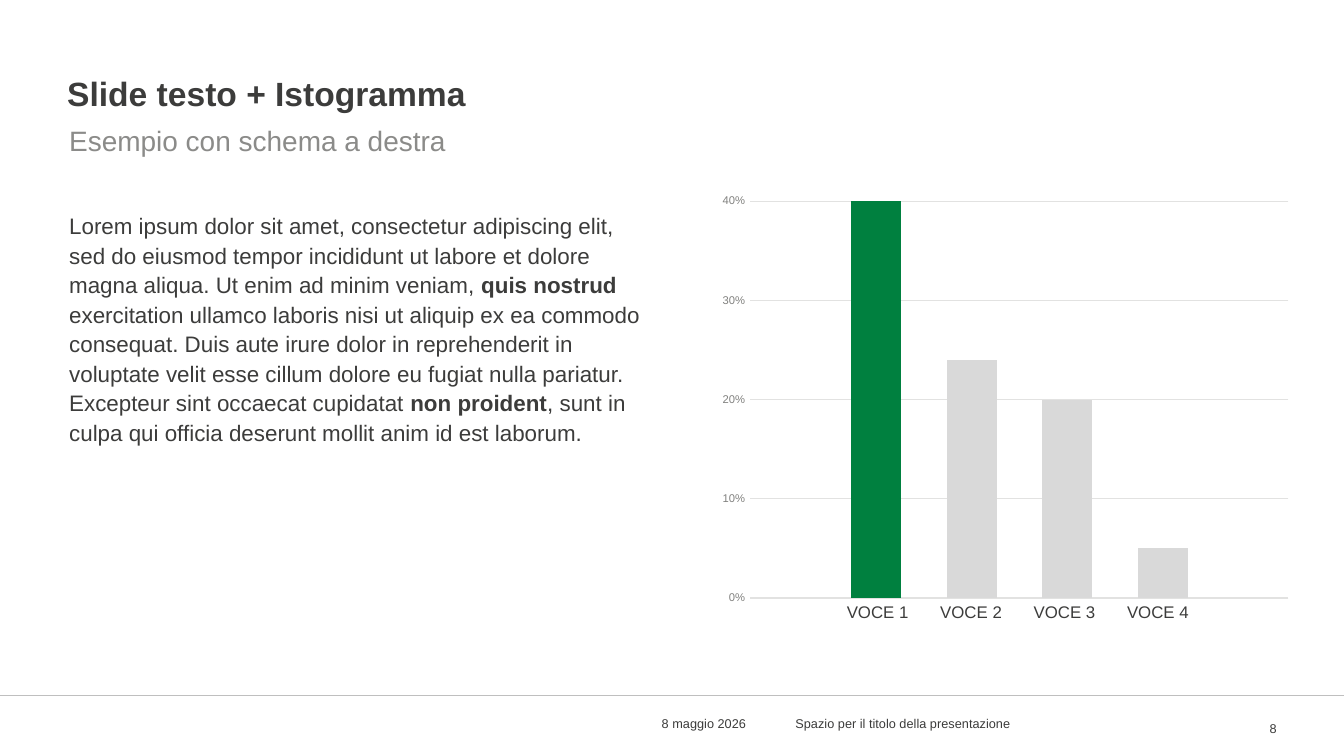
from lxml import etree
from pptx import Presentation
from pptx import util as u
from pptx.chart.data import CategoryChartData
from pptx.dml.color import RGBColor
from pptx.enum import chart as ch, shapes, text
from pptx.oxml import parse_xml
from pptx.oxml.ns import nsdecls, qn

PX = 4572  # 200 px to the inch
WIDTH, HEIGHT = 2000, 1125
FONT = "Arial"
DARK, GREY, PALE, GREEN = "3C3C3B", "8B8B89", "D9D9D9", "00803F"
LEFT, CENTER, RIGHT = text.PP_ALIGN.LEFT, text.PP_ALIGN.CENTER, text.PP_ALIGN.RIGHT

BODY = [
    ("Lorem ipsum dolor sit amet, consectetur adipiscing elit, sed do eiusmod "
     "tempor incididunt ut labore et dolore magna aliqua. Ut enim ad minim veniam, ", False),
    ("quis nostrud ", True),
    ("exercitation ullamco laboris nisi ut aliquip ex ea commodo consequat. Duis aute "
     "irure dolor in reprehenderit in voluptate velit esse cillum dolore eu fugiat "
     "nulla pariatur. Excepteur sint occaecat cupidatat ", False),
    ("non proident", True),
    (", sunt in culpa qui officia deserunt mollit anim id est laborum.", False),
]
VALUES = [0.43, 0.24, 0.2, 0.05]


def px(n):
    return u.Emu(n * PX)


def color(value):
    return RGBColor.from_string(value)


def style_font(font, size, value, bold=False):
    font.name, font.size, font.bold = FONT, u.Pt(size), bold
    font.color.rgb = color(value)


def fill_text(box, runs, size, value, insets, align=LEFT,
              anchor=text.MSO_ANCHOR.TOP, spacing=1.0):
    frame = box.text_frame
    frame.word_wrap = True
    frame.auto_size = text.MSO_AUTO_SIZE.NONE
    frame.vertical_anchor = anchor
    (frame.margin_left, frame.margin_top,
     frame.margin_right, frame.margin_bottom) = map(px, insets)
    paragraph = frame.paragraphs[0]
    paragraph.alignment, paragraph.line_spacing = align, spacing
    for words, bold in runs:
        run = paragraph.add_run()
        run.text = words
        style_font(run.font, size, value, bold)


def add_text(slide, at, runs, size, value=DARK, insets=(20, 10, 20, 10), **layout):
    box = slide.shapes.add_textbox(*map(px, at))
    fill_text(box, runs, size, value, insets, **layout)


def add_title(slide, words):
    title = slide.shapes.title
    title.left, title.top, title.width, title.height = map(px, (100, 0, 1800, 178))
    fill_text(title, [(words, True)], 18, DARK, (0, 10, 20, 10),
              anchor=text.MSO_ANCHOR.BOTTOM)


def add_rule(slide, y):
    rule = slide.shapes.add_connector(
        shapes.MSO_CONNECTOR.STRAIGHT, px(0), px(y), px(WIDTH), px(y))
    rule.line.color.rgb = color("BFBFBF")
    rule.line.width = u.Pt(0.25)
    etree.SubElement(rule._element.spPr, qn("a:effectLst"))


def place_plot(chart, x, y, w, h):
    """Fix the inner plot area, in fractions of the chart."""
    plot_area = chart._chartSpace.chart.plotArea
    for old in plot_area.findall(qn("c:layout")):
        plot_area.remove(old)
    plot_area.insert(0, parse_xml(
        f'<c:layout {nsdecls("c")}><c:manualLayout><c:layoutTarget val="inner"/>'
        '<c:xMode val="edge"/><c:yMode val="edge"/>'
        f'<c:x val="{x}"/><c:y val="{y}"/><c:w val="{w}"/><c:h val="{h}"/>'
        '</c:manualLayout></c:layout>'))


def add_histogram(slide, at, values):
    data = CategoryChartData(number_format="0%")
    data.categories = ["1"]
    for number, value in enumerate(values, 1):
        data.add_series(f"Series {number}", [value])
    chart = slide.shapes.add_chart(
        ch.XL_CHART_TYPE.COLUMN_CLUSTERED, *map(px, at), data).chart
    chart.has_legend = chart.has_title = False
    style_font(chart.font, 10, DARK)
    place_plot(chart, 0.066, 0.036, 0.914, 0.931)

    # Columns: the first one stands out
    plot = chart.plots[0]
    plot.gap_width, plot.overlap, plot.vary_by_categories = 400, -90, False
    for number, series in enumerate(plot.series):
        series.format.fill.solid()
        series.format.fill.fore_color.rgb = color(PALE if number else GREEN)

    # Axes
    chart.category_axis.visible = False
    axis = chart.value_axis
    axis.minimum_scale, axis.maximum_scale, axis.major_unit = 0, 0.4, 0.1
    axis.major_tick_mark = axis.minor_tick_mark = ch.XL_TICK_MARK.NONE
    axis.format.line.fill.background()
    axis.major_gridlines.format.line.color.rgb = color("E2E2E1")
    axis.major_gridlines.format.line.width = u.Pt(0.75)
    axis.tick_labels.number_format = "0%"
    axis.tick_labels.number_format_is_linked = False
    style_font(axis.tick_labels.font, 6, "81817F")


def main():
    deck = Presentation()
    deck.slide_width, deck.slide_height = px(WIDTH), px(HEIGHT)
    slide = deck.slides.add_slide(deck.slide_layouts[5])

    # Heading and body
    add_title(slide, "Slide testo + Istogramma")
    add_text(slide, (103, 169, 1068, 88), [("Esempio con schema a destra", False)],
             15, GREY, (0, 10, 20, 10), spacing=1.1)
    add_text(slide, (103, 312, 874, 684), BODY, 12,
             insets=(0, 0, 20, 0), spacing=1.1)

    # Chart with a label under each column
    add_histogram(slide, (1059, 277, 876, 634), VALUES)
    for number in range(len(VALUES)):
        add_text(slide, (1256 + 139 * number, 893, 100, 34),
                 [(f"VOCE {number + 1}", False)], 9,
                 insets=(0, 0, 0, 0), align=CENTER, spacing=1.1)

    # Footer
    add_rule(slide, 1035)
    add_text(slide, (965, 1056, 200, 60), [("8 maggio 2026", False)], 6.8)
    add_text(slide, (1164, 1056, 634, 60),
             [("Spazio per il titolo della presentazione", False)], 6.8)
    add_text(slide, (1818, 1059, 82, 60), [("8", False)], 6.8,
             insets=(20, 0, 0, 10), align=RIGHT, anchor=text.MSO_ANCHOR.MIDDLE)

    deck.save("out.pptx")


if __name__ == "__main__":
    main()
